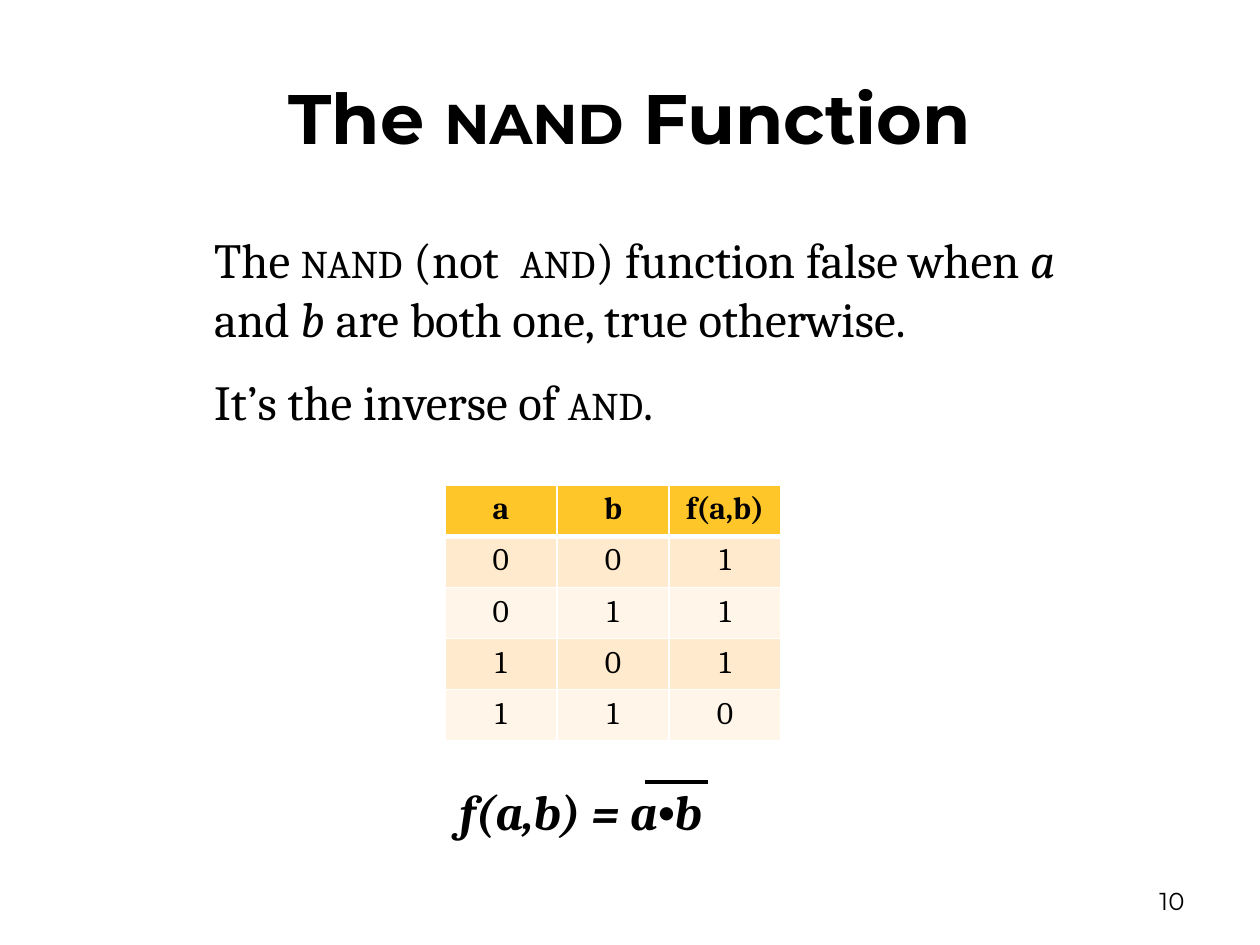
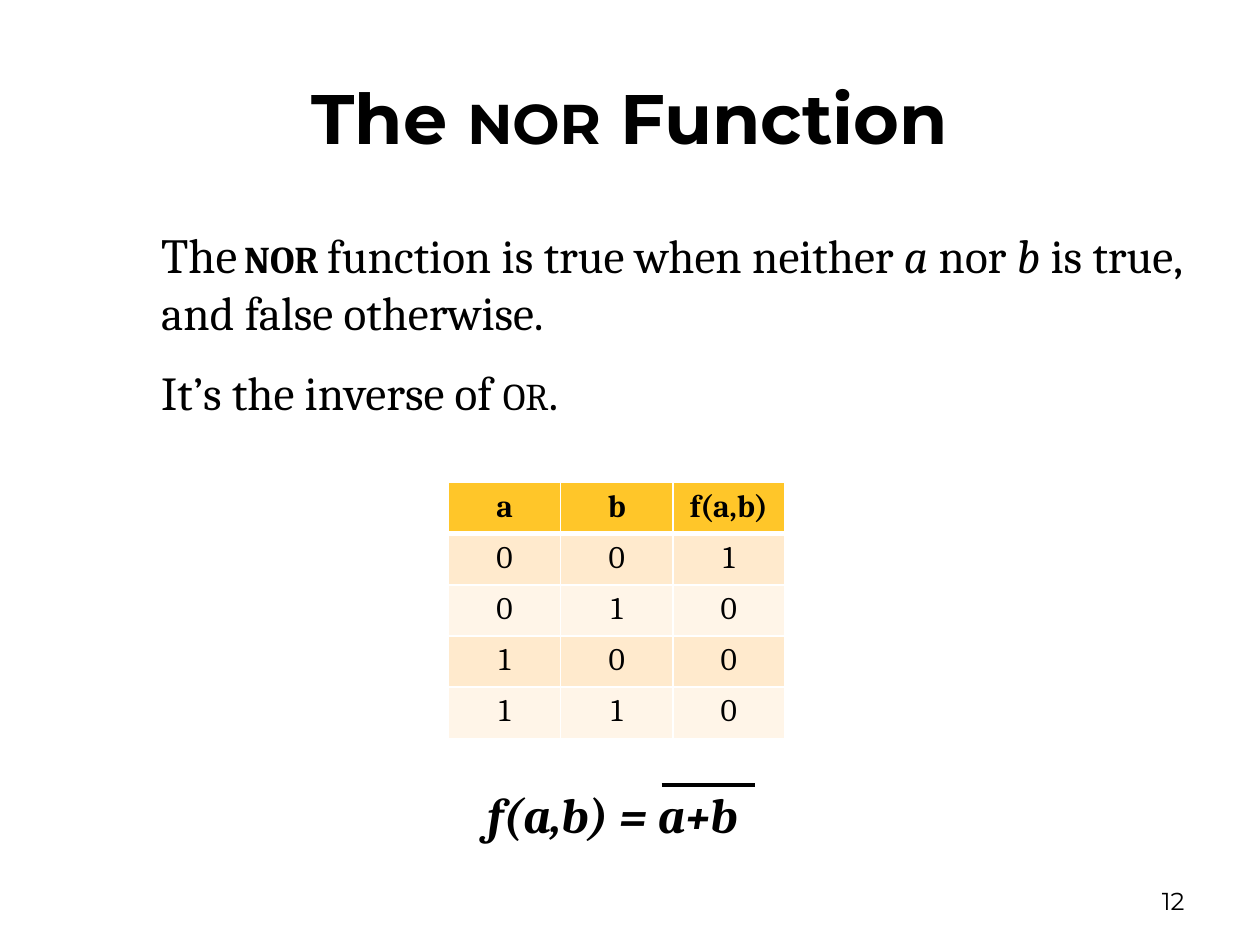
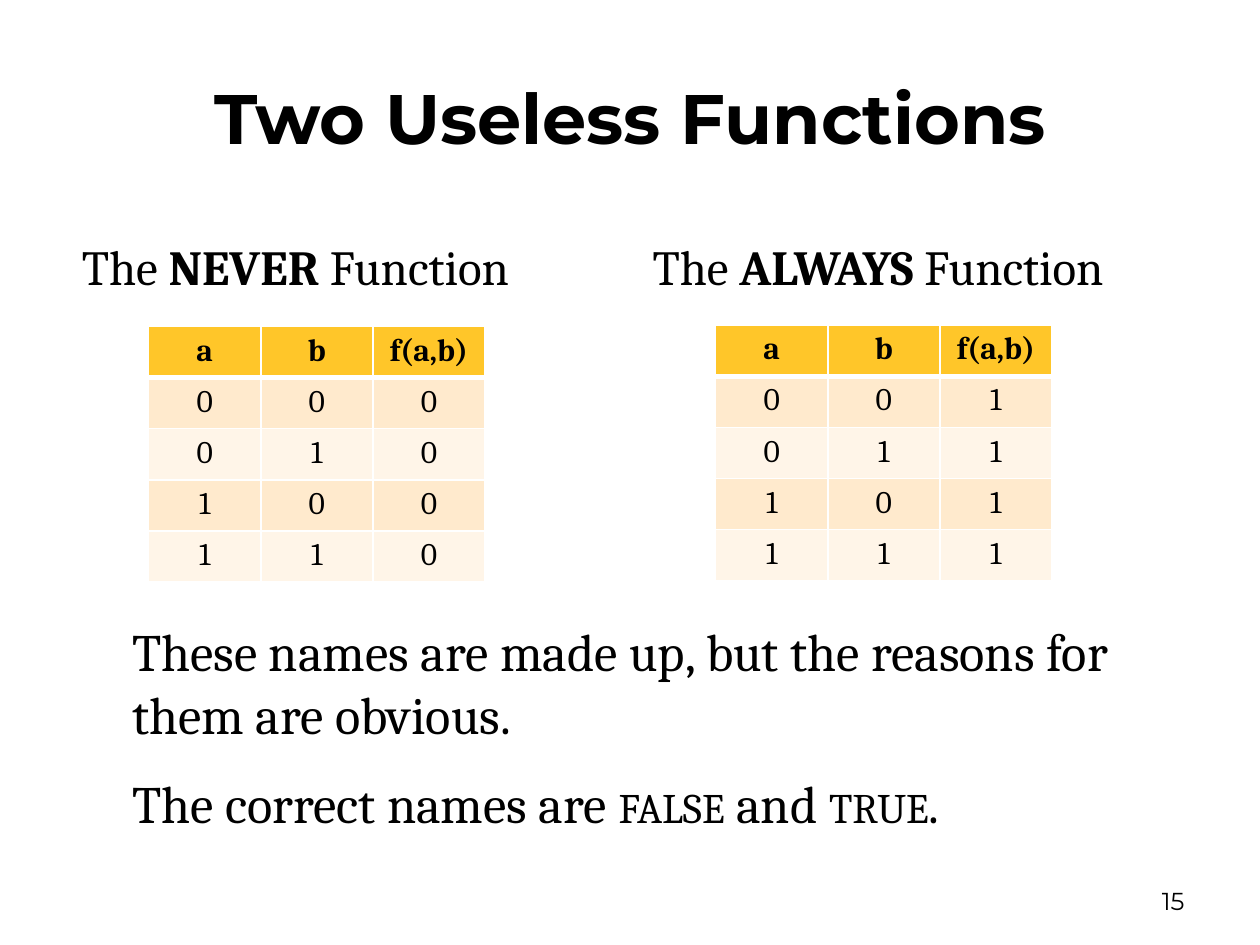
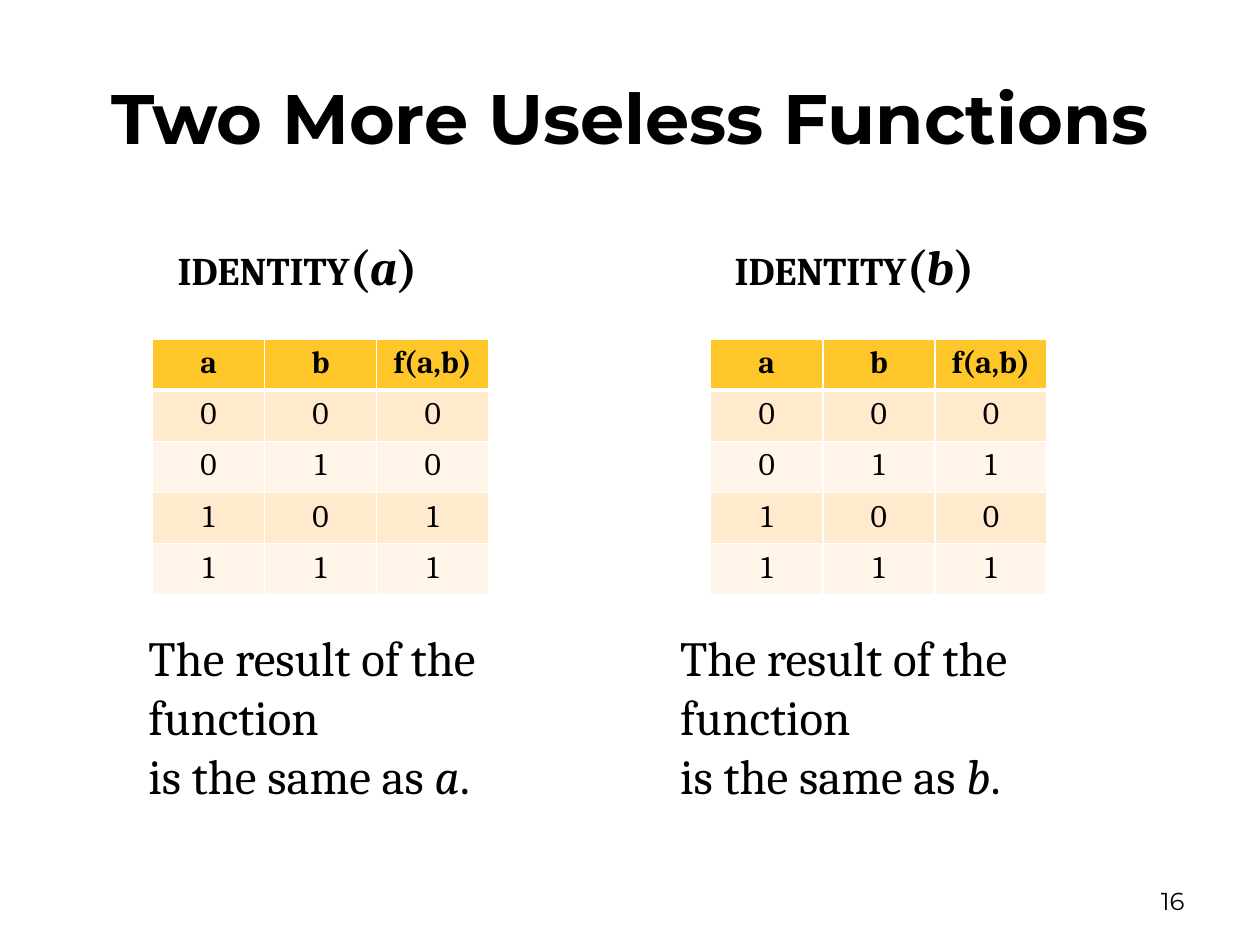
import itertools
from dataclasses import dataclass
from typing import Optional

import lxml.etree
import pptx
import pptx.dml.color
import pptx.enum.shapes
import pptx.enum.text
import pptx.oxml.ns
import pptx.util
from pptx.util import Inches

BLACK = pptx.dml.color.RGBColor(0x00, 0x00, 0x00)
WHITE = pptx.dml.color.RGBColor(0xFF, 0xFF, 0xFF)
GOLD = pptx.dml.color.RGBColor(0xFF, 0xC6, 0x29)
PEACH = pptx.dml.color.RGBColor(0xFF, 0xEA, 0xCD)
CREAM = pptx.dml.color.RGBColor(0xFF, 0xF5, 0xE8)

HEADING_FONT = "Montserrat"
BODY_FONT = "Cambria"
TITLE_ONLY_LAYOUT = 5
TABLE_HEADER = ("a", "b", "f(a,b)")
COLUMN_WIDTH = 0.89
TABLE_HEIGHT = 2.03
CENTER = pptx.enum.text.PP_ALIGN.CENTER
RIGHT = pptx.enum.text.PP_ALIGN.RIGHT
MIDDLE = pptx.enum.text.MSO_ANCHOR.MIDDLE


@dataclass(frozen=True)
class Span:
    text: str
    small: bool = False
    bold: Optional[bool] = None
    italic: Optional[bool] = None
    size: Optional[float] = None
    font: Optional[str] = None


@dataclass(frozen=True)
class TextBlock:
    left: float
    top: float
    width: float
    height: float
    paragraphs: list[list[Span]]
    size: float = 28
    bold: bool = False
    italic: bool = False
    side_inset: float = 0.12
    edge_inset: float = 0.06


@dataclass(frozen=True)
class Formula:
    block: TextBlock
    bar_left: float
    bar_right: float
    bar_top: float


@dataclass(frozen=True)
class TruthTable:
    left: float
    top: float
    outputs: str


@dataclass(frozen=True)
class Page:
    number: int
    title: list[Span]
    blocks: list[TextBlock]
    tables: list[TruthTable]
    formula: Optional[Formula] = None


def style_paragraph(para, font: str, size: float, bold: bool = False, italic: bool = False) -> None:
    para.font.name = font
    para.font.size = pptx.util.Pt(size)
    para.font.bold = bold
    para.font.italic = italic
    para.font.color.rgb = BLACK


def add_spans(para, spans: list[Span]) -> None:
    for span in spans:
        for index, line in enumerate(span.text.split("\n")):
            if index:
                para.add_line_break()
            run = para.add_run()
            run.text = line
            if span.small:
                run.font._element.set("cap", "small")
            if span.bold is not None:
                run.font.bold = span.bold
            if span.italic is not None:
                run.font.italic = span.italic
            if span.size is not None:
                run.font.size = pptx.util.Pt(span.size)
            if span.font is not None:
                run.font.name = span.font


def add_text_block(shapes, block: TextBlock) -> None:
    box = shapes.add_textbox(
        Inches(block.left), Inches(block.top), Inches(block.width), Inches(block.height)
    )
    frame = box.text_frame
    frame.word_wrap = True
    frame.auto_size = pptx.enum.text.MSO_AUTO_SIZE.SHAPE_TO_FIT_TEXT
    frame.margin_left = frame.margin_right = Inches(block.side_inset)
    frame.margin_top = frame.margin_bottom = Inches(block.edge_inset)
    for index, spans in enumerate(block.paragraphs):
        para = frame.add_paragraph() if index else frame.paragraphs[0]
        if index:
            para.space_before = pptx.util.Pt(block.size / 2)
        style_paragraph(para, BODY_FONT, block.size, block.bold, block.italic)
        add_spans(para, spans)


def add_formula(slide, formula: Formula) -> None:
    group = slide.shapes.add_group_shape()
    add_text_block(group.shapes, formula.block)
    bar = group.shapes.add_connector(
        pptx.enum.shapes.MSO_CONNECTOR.STRAIGHT,
        Inches(formula.bar_left), Inches(formula.bar_top),
        Inches(formula.bar_right), Inches(formula.bar_top),
    )
    bar.line.color.rgb = BLACK
    bar.line.width = pptx.util.Pt(2.25)
    lxml.etree.SubElement(bar._element.spPr, pptx.oxml.ns.qn("a:effectLst"))


def set_borders(cell, top: float, bottom: float) -> None:
    properties = cell._tc.get_or_add_tcPr()
    widths = {"lnL": 1, "lnR": 1, "lnT": top, "lnB": bottom}
    for index, (side, width) in enumerate(widths.items()):
        border = lxml.etree.Element(
            pptx.oxml.ns.qn(f"a:{side}"), w=str(pptx.util.Pt(width))
        )
        fill = lxml.etree.SubElement(border, pptx.oxml.ns.qn("a:solidFill"))
        lxml.etree.SubElement(fill, pptx.oxml.ns.qn("a:srgbClr"), val=str(WHITE))
        properties.insert(index, border)


def add_truth_table(slide, truth: TruthTable) -> None:
    inputs = itertools.product("01", repeat=2)
    rows = [TABLE_HEADER] + [
        (*pair, output) for pair, output in zip(inputs, truth.outputs)
    ]
    table = slide.shapes.add_table(
        len(rows), len(TABLE_HEADER), Inches(truth.left), Inches(truth.top),
        Inches(COLUMN_WIDTH * len(TABLE_HEADER)), Inches(TABLE_HEIGHT),
    ).table
    table.first_row = False
    table.horz_banding = False
    for row_index, values in enumerate(rows):
        is_header = row_index == 0
        color = GOLD if is_header else PEACH if row_index % 2 else CREAM
        for column_index, value in enumerate(values):
            cell = table.cell(row_index, column_index)
            cell.fill.solid()
            cell.fill.fore_color.rgb = color
            set_borders(cell, 3 if row_index == 1 else 1, 3 if is_header else 1)
            para = cell.text_frame.paragraphs[0]
            para.alignment = CENTER
            style_paragraph(para, BODY_FONT, 18, bold=is_header)
            para.add_run().text = value


def add_page_number(slide, number: int) -> None:
    box = slide.shapes.add_textbox(Inches(7.17), Inches(6.95), Inches(2.33), Inches(0.4))
    box.text_frame.word_wrap = True
    box.text_frame.vertical_anchor = MIDDLE
    para = box.text_frame.paragraphs[0]
    para.alignment = RIGHT
    style_paragraph(para, HEADING_FONT, 14)
    para.add_run().text = str(number)


def add_title(slide, spans: list[Span]) -> None:
    title = slide.shapes.title
    title.left, title.top = Inches(0.5), Inches(0.3)
    title.width, title.height = Inches(9), Inches(1.25)
    title.text_frame.vertical_anchor = MIDDLE
    para = title.text_frame.paragraphs[0]
    para.alignment = CENTER
    style_paragraph(para, HEADING_FONT, 40, bold=True)
    add_spans(para, spans)


def add_page(deck, page: Page) -> None:
    slide = deck.slides.add_slide(deck.slide_layouts[TITLE_ONLY_LAYOUT])
    add_title(slide, page.title)
    add_page_number(slide, page.number)
    for block in page.blocks:
        add_text_block(slide.shapes, block)
    if page.formula:
        add_formula(slide, page.formula)
    for truth in page.tables:
        add_truth_table(slide, truth)


def function_title(name: str) -> list[Span]:
    return [Span("The "), Span(name, small=True), Span(" Function")]


def useless_heading(left: float, name: str) -> TextBlock:
    spans = [Span("The "), Span(name, bold=True), Span(" Function")]
    return TextBlock(left, 1.82, 4.54, 0.61, [spans])


def identity_heading(left: float, width: float, variable: str) -> TextBlock:
    spans = [Span("identity", small=True), Span("("), Span(variable, italic=True), Span(")")]
    return TextBlock(left, 1.82, width, 0.59, [spans], bold=True)


def identity_result(left: float, variable: str) -> TextBlock:
    spans = [
        Span("The result of the function\nis the same as "),
        Span(variable, italic=True),
        Span("."),
    ]
    return TextBlock(left, 4.93, 3.92, 1.51, [spans], side_inset=0.1, edge_inset=0.05)


NAND_TEXT = [
    [
        Span("The "), Span("nand", small=True), Span(" (not  "), Span("and", small=True),
        Span(") function false when "), Span("a", italic=True), Span(" and "),
        Span("b", italic=True), Span(" are both one, true otherwise."),
    ],
    [Span("It’s the inverse of "), Span("and", small=True), Span(".")],
]
NOR_TEXT = [
    [
        Span("The", size=28), Span(" ", size=18), Span("nor ", small=True, bold=True),
        Span("function is true when neither "), Span("a", italic=True), Span(" nor "),
        Span("b", italic=True), Span(" is true, and false otherwise."),
    ],
    [Span("It’s the inverse of "), Span("or", small=True), Span(".")],
]
USELESS_TEXT = [
    [Span("These names are made up, but the reasons for them are obvious.")],
    [
        Span("The correct names are "), Span("false", small=True), Span(" and "),
        Span("true", small=True), Span("."),
    ],
]
NAND_FORMULA = [Span("f(a,b) = a"), Span("•", font="Times New Roman"), Span("b")]
NOR_FORMULA = [Span("f(a,b) = a+b")]

PAGES = [
    Page(
        10,
        function_title("nand"),
        [TextBlock(1.58, 1.76, 7.28, 1.77, NAND_TEXT)],
        [TruthTable(3.53, 3.85, "1110")],
        Formula(
            TextBlock(3.53, 6.14, 2.64, 0.61, [NAND_FORMULA], bold=True, italic=True),
            5.12, 5.62, 6.21,
        ),
    ),
    Page(
        12,
        function_title("nor"),
        [TextBlock(1.16, 1.72, 8.44, 1.73, NOR_TEXT, size=27)],
        [TruthTable(3.56, 3.83, "1000")],
        Formula(
            TextBlock(3.75, 6.17, 3.27, 0.61, [NOR_FORMULA], bold=True, italic=True),
            5.25, 5.99, 6.23,
        ),
    ),
    Page(
        15,
        [Span("Two Useless Functions")],
        [
            useless_heading(0.53, "NEVER"),
            useless_heading(5.06, "ALWAYS"),
            TextBlock(0.93, 4.85, 8.44, 1.89, USELESS_TEXT, size=30),
        ],
        [TruthTable(1.18, 2.59, "0000"), TruthTable(5.68, 2.58, "1111")],
    ),
    Page(
        16,
        [Span("Two More Useless Functions")],
        [
            identity_heading(1.29, 2.64, "a"),
            identity_heading(5.71, 2.35, "b"),
            identity_result(1.08, "a"),
            identity_result(5.3, "b"),
        ],
        [TruthTable(1.21, 2.69, "0011"), TruthTable(5.64, 2.69, "0101")],
    ),
]


def main() -> None:
    deck = pptx.Presentation()
    deck.slide_width = Inches(10)
    deck.slide_height = Inches(7.5)
    for page in PAGES:
        add_page(deck, page)
    deck.save("out.pptx")


if __name__ == "__main__":
    main()
